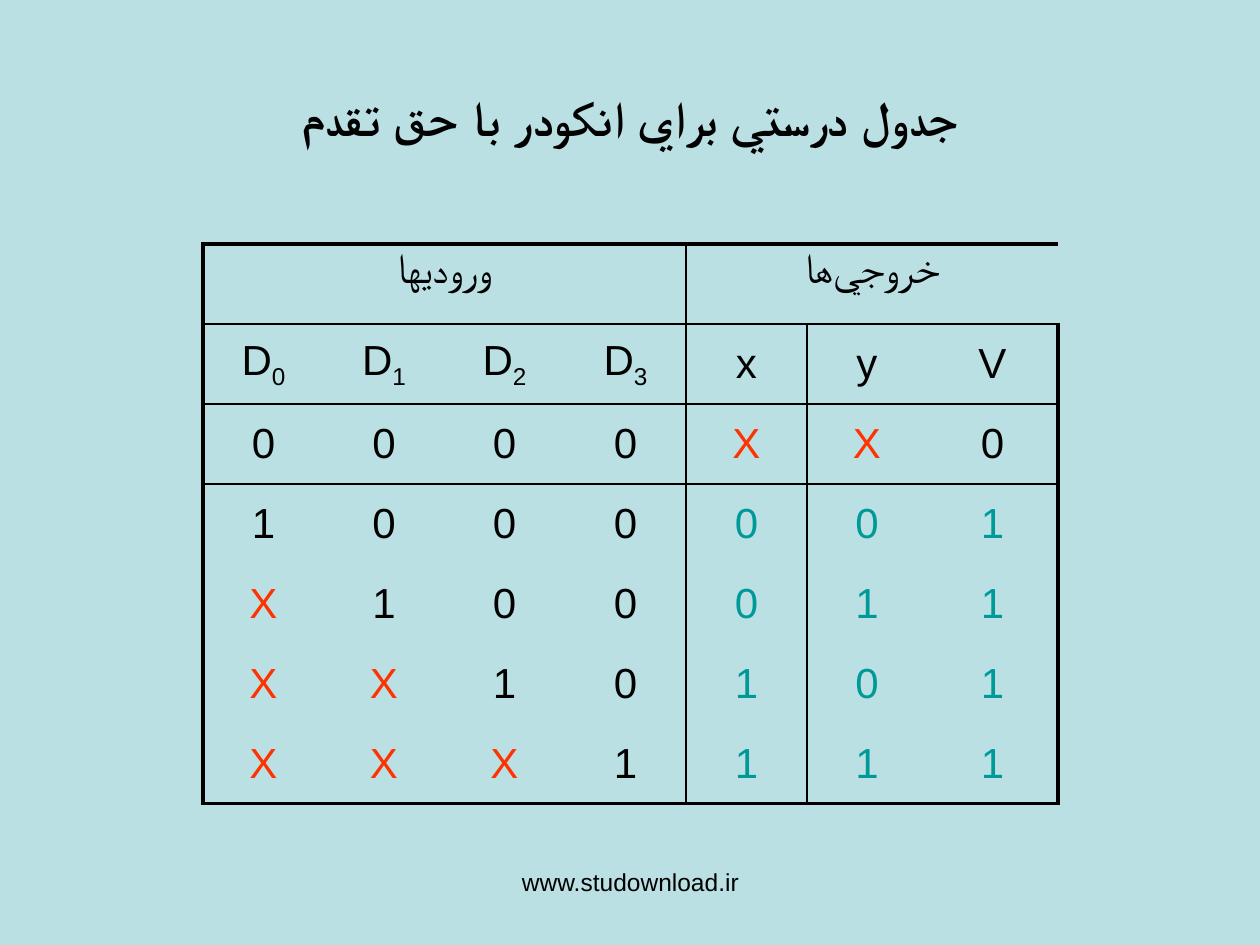
from lxml import etree
from pptx import Presentation
from pptx.dml.color import RGBColor
from pptx.enum.text import MSO_ANCHOR, PP_ALIGN
from pptx.oxml.ns import qn
from pptx.util import Emu, Pt

CENTER = PP_ALIGN.CENTER
TOP, MIDDLE = MSO_ANCHOR.TOP, MSO_ANCHOR.MIDDLE
NO_GRID_STYLE = "{2D5ABB26-0587-4C30-8999-92F81FD0307C}"
THEME = {
    "font": "Arial",
    "background": "BBE0E3",
    "ink": "000000",
    "dont_care": "FF3300",
    "output": "009999",
    "title": 28,
    "cell": 24,
    "footer": 14,
    "thick": 2.25,
    "thin": 1,
}


def px(n):
    return Emu(round(n * 914400 / 126))


def write(tf, text, size=THEME["cell"], color=THEME["ink"], bold=False, sub="", rtl=False):
    p = tf.paragraphs[0]
    p.alignment = CENTER
    if rtl:
        p._p.get_or_add_pPr().set("rtl", "1")
    for part, baseline in ((text, 0), (sub, -25000)):
        if not part:
            continue
        r = p.add_run()
        r.text = part
        r.font.name = THEME["font"]
        r.font.size = Pt(size)
        r.font.bold = bold
        r.font.color.rgb = RGBColor.from_string(color)
        if baseline:
            r._r.get_or_add_rPr().set("baseline", str(baseline))


prs = Presentation()
prs.slide_width, prs.slide_height = px(1260), px(945)
s = prs.slides.add_slide(prs.slide_layouts[6])
s.background.fill.solid()
s.background.fill.fore_color.rgb = RGBColor.from_string(THEME["background"])

title = s.shapes.add_textbox(px(63), px(38), px(1134), px(158))
title.text_frame.word_wrap = True
title.text_frame.vertical_anchor = MIDDLE
write(title.text_frame, "جدول درستي براي انكودر با حق تقدم", size=THEME["title"], bold=True, rtl=True)

groups = [(0, 3, "وروديها"), (4, 6, "خروجي\u200cها".replace("\u200c", chr(8204)))]
headings = ["D0", "D1", "D2", "D3", "x", "y", "V"]
truth_rows = ["0000XX0", "1000001", "X100011", "XX10101", "XXX1111"]
column_widths = [121, 120, 121, 121, 121, 120, 131]
row_height = 80
row_count = len(truth_rows) + 2
last_row, last_col = row_count - 1, len(headings) - 1

frame = s.shapes.add_table(row_count, len(headings), px(203), px(244),
                           px(sum(column_widths)), px(row_height * row_count))
table = frame.table
table.first_row = table.horz_banding = False
table._tbl.tblPr.find(qn("a:tableStyleId")).text = NO_GRID_STYLE
for column, width in zip(table.columns, column_widths):
    column.width = px(width)
for row in table.rows:
    row.height = px(row_height)

for first, last, label in groups:
    table.cell(0, first).merge(table.cell(0, last))
    write(table.cell(0, first).text_frame, label, rtl=True)

for c, heading in enumerate(headings):
    write(table.cell(1, c).text_frame, heading[0], sub=heading[1:])

for r, values in enumerate(truth_rows, 2):
    for c, value in enumerate(values):
        color = THEME["ink"]
        if value == "X":
            color = THEME["dont_care"]
        elif c >= groups[1][0] and r > 2:
            color = THEME["output"]
        write(table.cell(r, c).text_frame, value, color=color)

thick, thin = THEME["thick"], THEME["thin"]
for r in range(row_count):
    for c in range(len(headings)):
        cell = table.cell(r, c)
        cell.vertical_anchor = MIDDLE if r else TOP
        cell.fill.background()
        borders = {
            "a:lnL": {0: thick, 4: thin}.get(c),
            "a:lnR": {3: thin, last_col: thick}.get(c),
            "a:lnT": {0: thick, 1: thin, 2: thin}.get(r),
            "a:lnB": {0: thin, 1: thin, last_row: thick}.get(r),
        }
        tcPr = cell._tc.get_or_add_tcPr()
        drawn = [(tag, width) for tag, width in borders.items() if width]
        for i, (tag, width) in enumerate(drawn):
            ln = etree.Element(qn(tag), w=str(Pt(width)))
            fill = etree.SubElement(ln, qn("a:solidFill"))
            etree.SubElement(fill, qn("a:srgbClr"), val=THEME["ink"])
            tcPr.insert(i, ln)

footer = s.shapes.add_textbox(px(431), px(861), px(399), px(66))
footer.text_frame.word_wrap = True
write(footer.text_frame, "www.studownload.ir", size=THEME["footer"])

prs.save("out.pptx")
